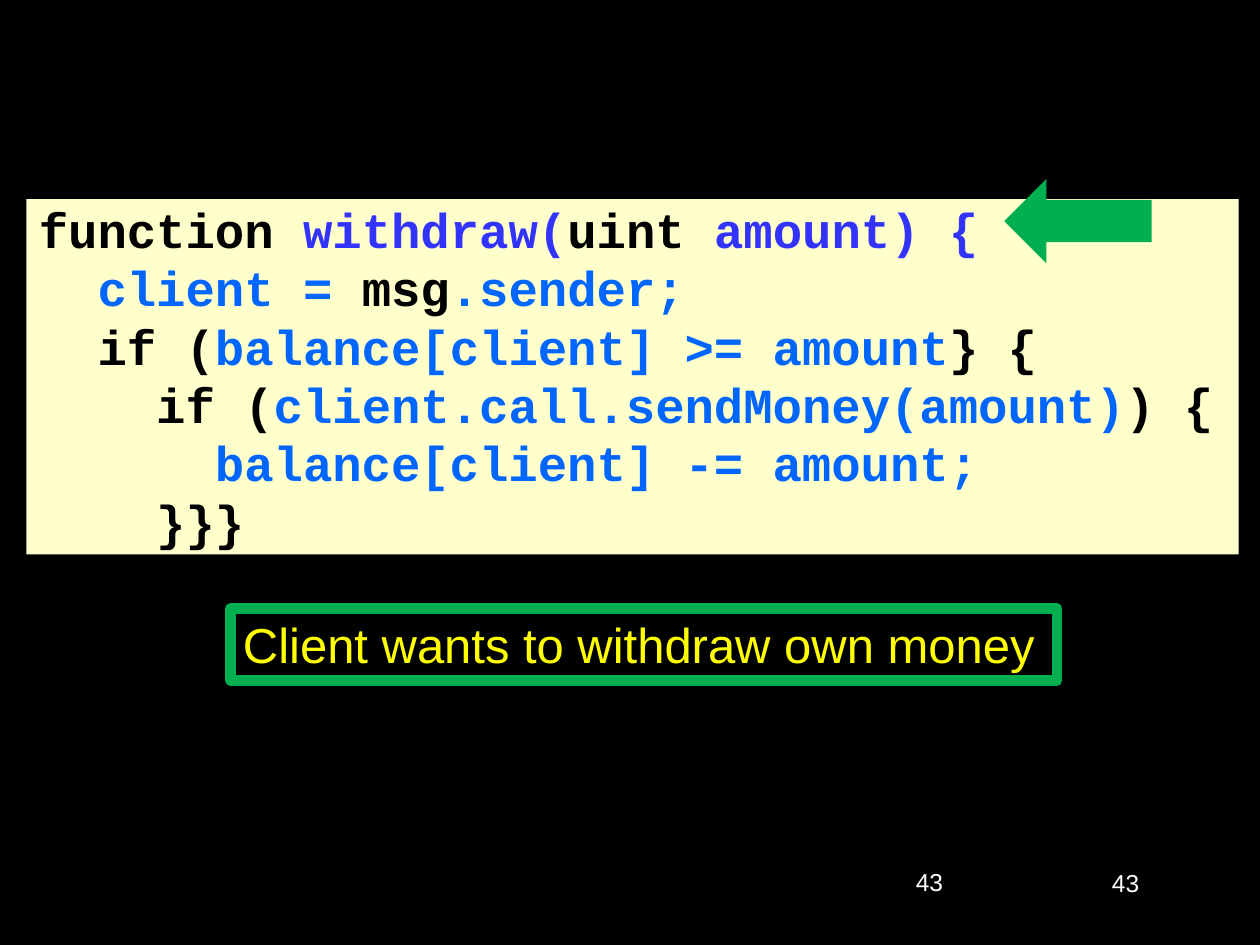
from dataclasses import dataclass

from pptx import Presentation, util as u
from pptx.dml.color import RGBColor
from pptx.enum import shapes, text


@dataclass(frozen=True)
class Theme:
    background: str = "000000"
    panel: str = "FFFFCC"
    keyword: str = "000000"
    signature: str = "3333FF"
    statement: str = "0066FF"
    accent: str = "00B050"
    caption: str = "FFFF00"
    number: str = "FFFFFF"
    body_font: str = "Arial"
    code_font: str = "Courier New"
    main_size: int = 28
    number_size: int = 14
    code_gap: float = 9.8
    border: int = 6


THEME = Theme()

CODE = [
    [("function ", THEME.keyword), ("withdraw(", THEME.signature),
     ("uint", THEME.keyword), (" amount) {", THEME.signature)],
    [("  client = ", THEME.statement), ("msg", THEME.keyword),
     (".sender;", THEME.statement)],
    [("  if (", THEME.keyword), ("balance[client] >= amount", THEME.statement),
     ("} {", THEME.keyword)],
    [("    if (", THEME.keyword),
     ("client.call.sendMoney(amount)", THEME.statement),
     (") {", THEME.keyword)],
    [("      balance[client] -= amount;", THEME.statement)],
    [("    }}}", THEME.keyword)],
]


def inches(*box):
    return [u.Inches(length) for length in box]


def style(font, name, size, color):
    font.name = name
    font.size = u.Pt(size)
    font.color.rgb = RGBColor.from_string(color)


def add_block(slide, kind, box, fill):
    block = slide.shapes.add_shape(kind, *inches(*box))
    block.shadow.inherit = False
    block.fill.solid()
    block.fill.fore_color.rgb = RGBColor.from_string(fill)
    block.line.fill.background()
    return block


def add_code(slide, box):
    panel = add_block(slide, shapes.MSO_SHAPE.RECTANGLE, box, THEME.panel)
    frame = panel.text_frame
    frame.word_wrap = True
    frame.vertical_anchor = text.MSO_ANCHOR.TOP
    frame.margin_top = u.Inches(0.13)
    for index, tokens in enumerate(CODE):
        line = frame.add_paragraph() if index else frame.paragraphs[0]
        line.alignment = text.PP_ALIGN.LEFT
        line.line_spacing = 0.7
        if index:
            line.space_before = u.Pt(THEME.code_gap)
        for wording, color in tokens:
            token = line.add_run()
            token.text = wording
            style(token.font, THEME.code_font, THEME.main_size, color)
            token.font.bold = True


def add_pointer(slide, box):
    add_block(slide, shapes.MSO_SHAPE.LEFT_ARROW, box, THEME.accent)


def add_caption(slide, box):
    caption = add_block(slide, shapes.MSO_SHAPE.RECTANGLE, box, THEME.background)
    caption.line.color.rgb = RGBColor.from_string(THEME.accent)
    caption.line.width = u.Pt(THEME.border)
    frame = caption.text_frame
    frame.text = "Client wants to withdraw own money"
    frame.word_wrap = False
    frame.vertical_anchor = text.MSO_ANCHOR.TOP
    wording = frame.paragraphs[0]
    wording.alignment = text.PP_ALIGN.LEFT
    style(wording.runs[0].font, THEME.body_font, THEME.main_size, THEME.caption)


def add_page_number(slide, box, alignment):
    frame = slide.shapes.add_textbox(*inches(*box)).text_frame
    frame.text = "43"
    frame.word_wrap = True
    number = frame.paragraphs[0]
    number.alignment = alignment
    style(number.runs[0].font, THEME.body_font, THEME.number_size, THEME.number)


def main():
    deck = Presentation()
    deck.slide_width, deck.slide_height = inches(10, 7.5)
    slide = deck.slides.add_slide(deck.slide_layouts[6])
    slide.background.fill.solid()
    slide.background.fill.fore_color.rgb = RGBColor.from_string(THEME.background)

    add_page_number(slide, (7.06, 6.84, 2.08, 0.5), text.PP_ALIGN.RIGHT)
    add_code(slide, (0.21, 1.58, 9.62, 2.82))
    add_pointer(slide, (7.97, 1.42, 1.17, 0.67))
    add_caption(slide, (1.83, 4.83, 6.56, 0.57))
    add_page_number(slide, (7.17, 6.83, 2.08, 0.5), text.PP_ALIGN.LEFT)

    deck.save("out.pptx")


if __name__ == "__main__":
    main()
